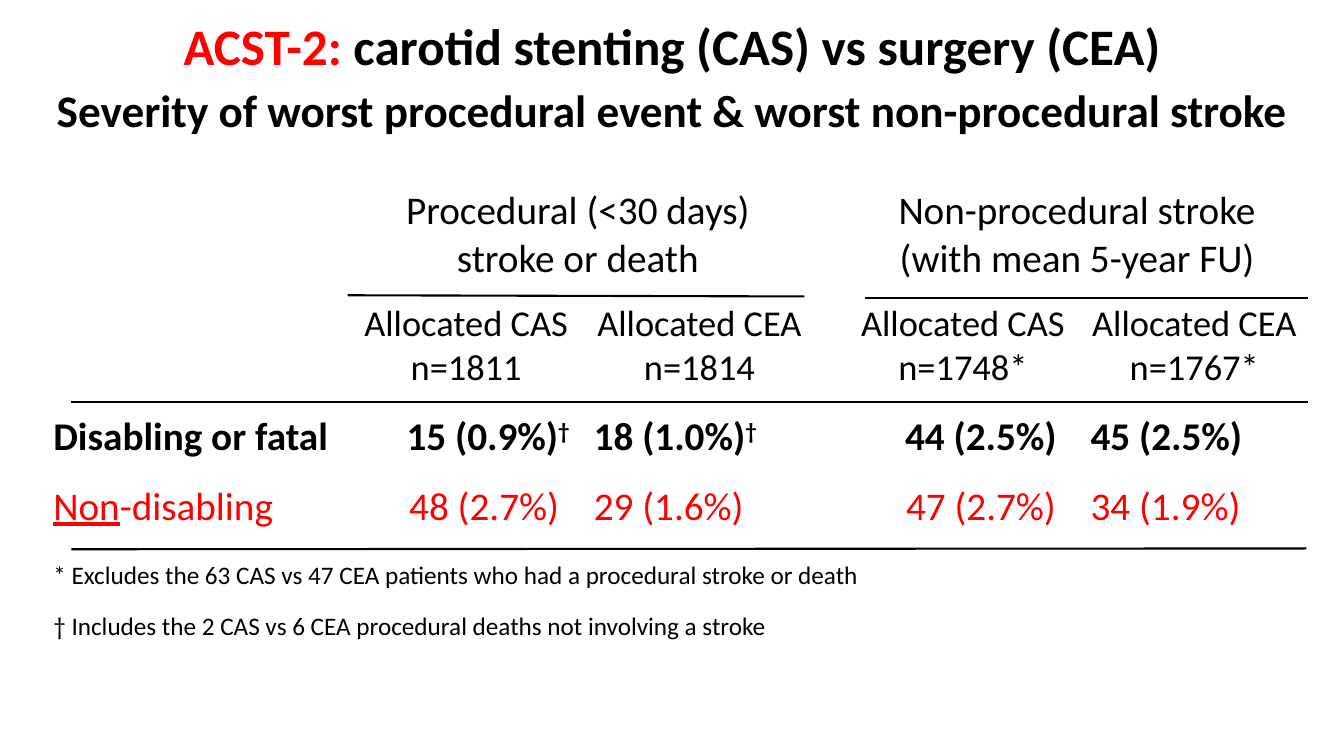
from pptx import Presentation
from pptx.dml.color import RGBColor
from pptx.enum.shapes import MSO_CONNECTOR
from pptx.enum.text import MSO_ANCHOR, PP_ALIGN
from pptx.oxml.ns import qn
from pptx.util import Cm, Pt
from lxml import etree

COLORS = {"text": "000000", "accent": "FF0000", "paper": "FFFFFF"}
FONT = "Calibri"
COLUMN_WIDTHS = [7.7, 5.92, 5.84, 0.76, 5.92, 5.74]
ROW_HEIGHTS = [2.97, 2.59, 2.03, 1.45, 2.0]
STAGES = {1: "Procedural (<30 days)\nstroke or death",
          4: "Non-procedural stroke\n(with mean 5-year FU)"}
ARMS = {1: "Allocated CAS\nn=1811", 2: "Allocated CEA\nn=1814",
        4: "Allocated CAS\nn=1748*", 5: "Allocated CEA\nn=1767*"}
DISABLING = {0: "Disabling or fatal", 1: "15 (0.9%)†", 2: "18 (1.0%)†",
             4: "44 (2.5%)", 5: "45 (2.5%)"}
NON_DISABLING = {0: "Non-disabling", 1: "48 (2.7%)", 2: "29 (1.6%)",
                 4: "47 (2.7%)", 5: "34 (1.9%)"}
FOOTNOTES = ("* Excludes the 63 CAS vs 47 CEA patients who had a procedural stroke or death\n"
             "† Includes the 2 CAS vs 6 CEA procedural deaths not involving a stroke")
RULES = [(20.7, 3.07, 31.88, 3.07), (0.71, 5.68, 31.88, 5.68),
         (0.71, 9.39, 31.83, 9.37), (7.67, 2.99, 19.18, 3.02)]


def style(run, size, color="text", bold=False):
    run.font.name = FONT
    run.font.size = Pt(size)
    run.font.bold = bold
    run.font.color.rgb = RGBColor.from_string(COLORS[color])


def split_last_runs(paragraph, *parts):
    paragraph.text = parts[0]
    for part in parts[1:]:
        paragraph.add_run().text = part
    return paragraph.runs


def add_heading(slide, left, top, width, height):
    frame = slide.shapes.add_textbox(Cm(left), Cm(top), Cm(width), Cm(height)).text_frame
    frame.word_wrap = True
    trial = frame.paragraphs[0]
    name, comparison = split_last_runs(trial, "ACST-2: ", "carotid stenting (CAS) vs surgery (CEA)")
    style(name, 36.5, "accent", True)
    style(comparison, 36.5, bold=True)
    topic = frame.add_paragraph()
    topic.text = "Severity of worst procedural event & worst non-procedural stroke"
    topic.space_before = Pt(13)
    style(topic.runs[0], 32.3, bold=True)
    for paragraph in (trial, topic):
        paragraph.alignment = PP_ALIGN.CENTER
        paragraph.line_spacing = 0.8


def fill_cell(cell, text, size, color="text", bold=False, align=PP_ALIGN.CENTER,
              anchor=MSO_ANCHOR.MIDDLE):
    cell.text_frame.text = text
    cell.vertical_anchor = anchor
    for paragraph in cell.text_frame.paragraphs:
        paragraph.alignment = align
        for run in paragraph.runs:
            style(run, size, color, bold)


def fill_outcomes(table, row, outcomes, color, bold, anchor):
    for column, text in outcomes.items():
        cell = table.cell(row, column)
        align = PP_ALIGN.CENTER if column in (1, 4) else PP_ALIGN.LEFT
        if align == PP_ALIGN.CENTER:
            cell.margin_left = Cm(1.2 if text.endswith("†") else 1)
            cell.margin_right = Cm(0.1)
        fill_cell(cell, text, 28, color, bold, align, anchor)
        if text.endswith("†"):
            count, dagger = split_last_runs(cell.text_frame.paragraphs[0], text[:-1], "†")
            for run in (count, dagger):
                style(run, 28, color, bold)
            dagger.font._element.set("baseline", "30000")


def add_results(slide, left, top, width, height):
    table = slide.shapes.add_table(len(ROW_HEIGHTS), len(COLUMN_WIDTHS),
                                   Cm(left), Cm(top), Cm(width), Cm(height)).table
    table.first_row = table.horz_banding = False
    for column, column_width in zip(table.columns, COLUMN_WIDTHS):
        column.width = Cm(column_width)
    for row, row_height in zip(table.rows, ROW_HEIGHTS):
        row.height = Cm(row_height)
        for cell in row.cells:
            cell.fill.solid()
            cell.fill.fore_color.rgb = RGBColor.from_string(COLORS["paper"])

    for column, stage in STAGES.items():
        table.cell(0, column).merge(table.cell(0, column + 1))
        fill_cell(table.cell(0, column), stage, 28)
    table.cell(0, 1).margin_right = Cm(0.47)
    for column, arm in ARMS.items():
        fill_cell(table.cell(1, column), arm, 26)
    fill_outcomes(table, 2, DISABLING, "text", True, MSO_ANCHOR.MIDDLE)
    fill_outcomes(table, 3, NON_DISABLING, "accent", False, MSO_ANCHOR.TOP)
    prefix, rest = split_last_runs(table.cell(3, 0).text_frame.paragraphs[0], "Non", "-disabling")
    for run in (prefix, rest):
        style(run, 28, "accent")
    prefix.font.underline = True

    footnotes = table.cell(4, 0)
    footnotes.merge(table.cell(4, len(COLUMN_WIDTHS) - 1))
    fill_cell(footnotes, FOOTNOTES, 18, align=PP_ALIGN.LEFT, anchor=MSO_ANCHOR.TOP)
    footnotes.margin_top = Cm(0.64)
    footnotes.text_frame.paragraphs[1].space_before = Pt(14.6)


def add_rules(slide, left, top):
    for x1, y1, x2, y2 in RULES:
        rule = slide.shapes.add_connector(MSO_CONNECTOR.STRAIGHT, Cm(left + x1), Cm(top + y1),
                                          Cm(left + x2), Cm(top + y2))
        rule.line.color.rgb = RGBColor.from_string(COLORS["text"])
        rule.line.width = Pt(1.5)
        etree.SubElement(rule._element.spPr, qn("a:effectLst"))


def main():
    deck = Presentation()
    deck.slide_width, deck.slide_height = Cm(33.87), Cm(19.05)
    slide = deck.slides.add_slide(deck.slide_layouts[6])
    add_heading(slide, 0, 0.53, 33.87, 3.68)
    add_results(slide, 1.09, 4.45, sum(COLUMN_WIDTHS), sum(ROW_HEIGHTS))
    add_rules(slide, 1.09, 4.45)
    deck.save("out.pptx")


if __name__ == "__main__":
    main()
